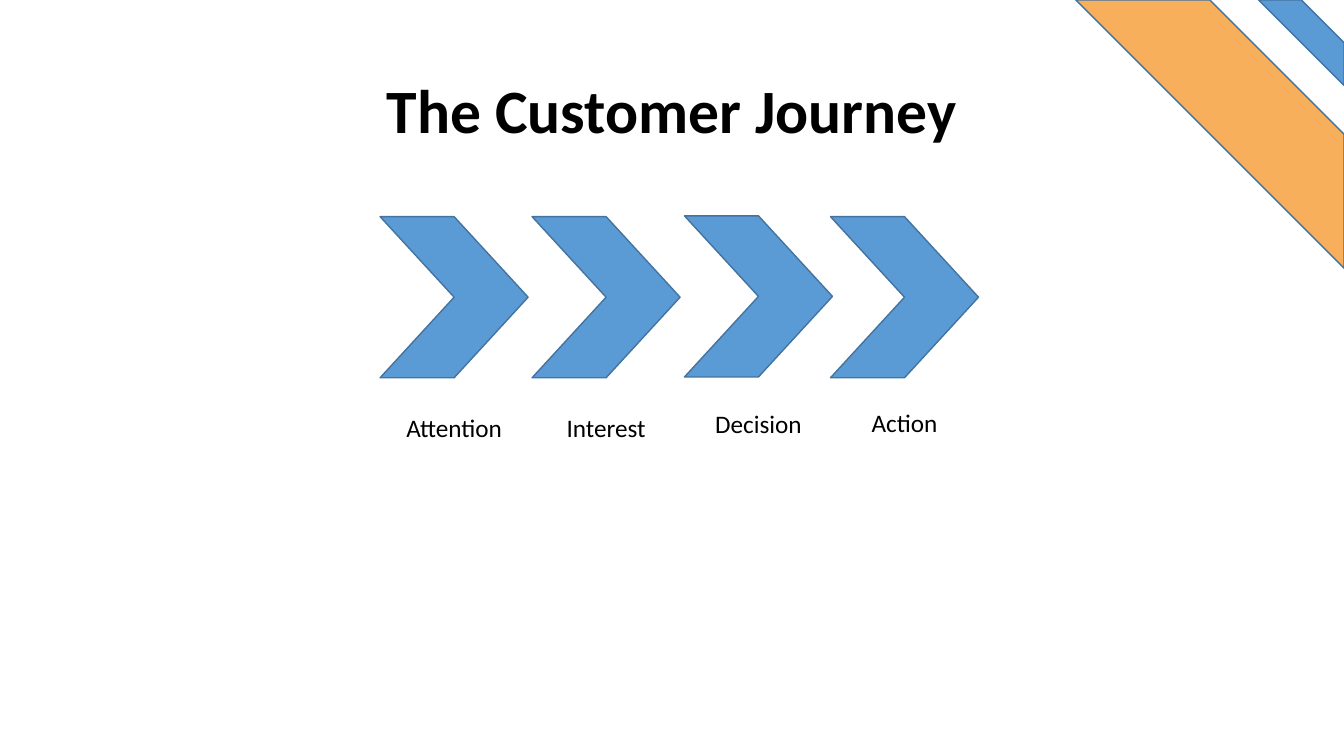
"""Build the customer journey slide with four chevron stages."""
from pptx import Presentation
from pptx.dml.color import RGBColor
from pptx.enum.shapes import MSO_SHAPE
from pptx.enum.text import MSO_ANCHOR, PP_ALIGN
from pptx.util import Cm, Pt

CHEVRON = MSO_SHAPE.CHEVRON
STRIPE = MSO_SHAPE.DIAGONAL_STRIPE
CENTER = PP_ALIGN.CENTER
MIDDLE = MSO_ANCHOR.MIDDLE

BLUE, ORANGE, OUTLINE, BLACK = "5B9BD5", "F7AF5C", "43739E", "000000"
FONT = "Calibri"
PAGE_WIDTH, PAGE_HEIGHT = 33.87, 19.05

TITLE = "The Customer Journey"
# Label, chevron left, chevron top, label top, label width (cm)
STAGES = [
    ("Attention", 9.58, 5.46, 10.26, 3.0),
    ("Interest", 13.41, 5.46, 10.26, 2.67),
    ("Decision", 17.25, 5.44, 10.16, 2.82),
    ("Action", 20.93, 5.46, 10.13, 2.29),
]
CHEVRON_WIDTH, CHEVRON_HEIGHT = 3.73, 4.06
LABEL_HEIGHT = 1.02
CORNER_STRIPES = [(2.15, BLUE), (6.76, ORANGE)]


def color(value):
    return RGBColor.from_string(value)


def add_figure(page, kind, left, top, width, height, fill):
    figure = page.shapes.add_shape(kind, Cm(left), Cm(top), Cm(width), Cm(height))
    figure.shadow.inherit = False
    figure.fill.solid()
    figure.fill.fore_color.rgb = color(fill)
    figure.line.color.rgb = color(OUTLINE)
    figure.line.width = Pt(1)
    return figure


def write_text(box, text, size=18, bold=False, spacing=1.0, anchor=MSO_ANCHOR.TOP):
    frame = box.text_frame
    frame.word_wrap = True
    frame.vertical_anchor = anchor
    para = frame.paragraphs[0]
    para.alignment = CENTER
    para.line_spacing = spacing
    span = para.add_run()
    span.text = text
    span.font.name = FONT
    span.font.size = Pt(size)
    span.font.bold = bold
    span.font.color.rgb = color(BLACK)


def main():
    deck = Presentation()
    deck.slide_width, deck.slide_height = Cm(PAGE_WIDTH), Cm(PAGE_HEIGHT)
    page = deck.slides.add_slide(deck.slide_layouts.get_by_name("Title Only"))

    for side, fill in CORNER_STRIPES:
        stripe = add_figure(page, STRIPE, PAGE_WIDTH - side, 0, side, side, fill)
        stripe.rotation = 90

    title = page.shapes.title
    title.left, title.top = Cm(2.33), Cm(1.01)
    title.width, title.height = Cm(29.21), Cm(3.68)
    write_text(title, TITLE, size=44, bold=True, spacing=0.9, anchor=MIDDLE)

    for label, left, top, label_top, label_width in STAGES:
        add_figure(page, CHEVRON, left, top, CHEVRON_WIDTH, CHEVRON_HEIGHT, BLUE)
        label_left = left + (CHEVRON_WIDTH - label_width) / 2
        box = page.shapes.add_textbox(
            Cm(label_left), Cm(label_top), Cm(label_width), Cm(LABEL_HEIGHT))
        write_text(box, label)

    deck.save("out.pptx")


if __name__ == "__main__":
    main()
